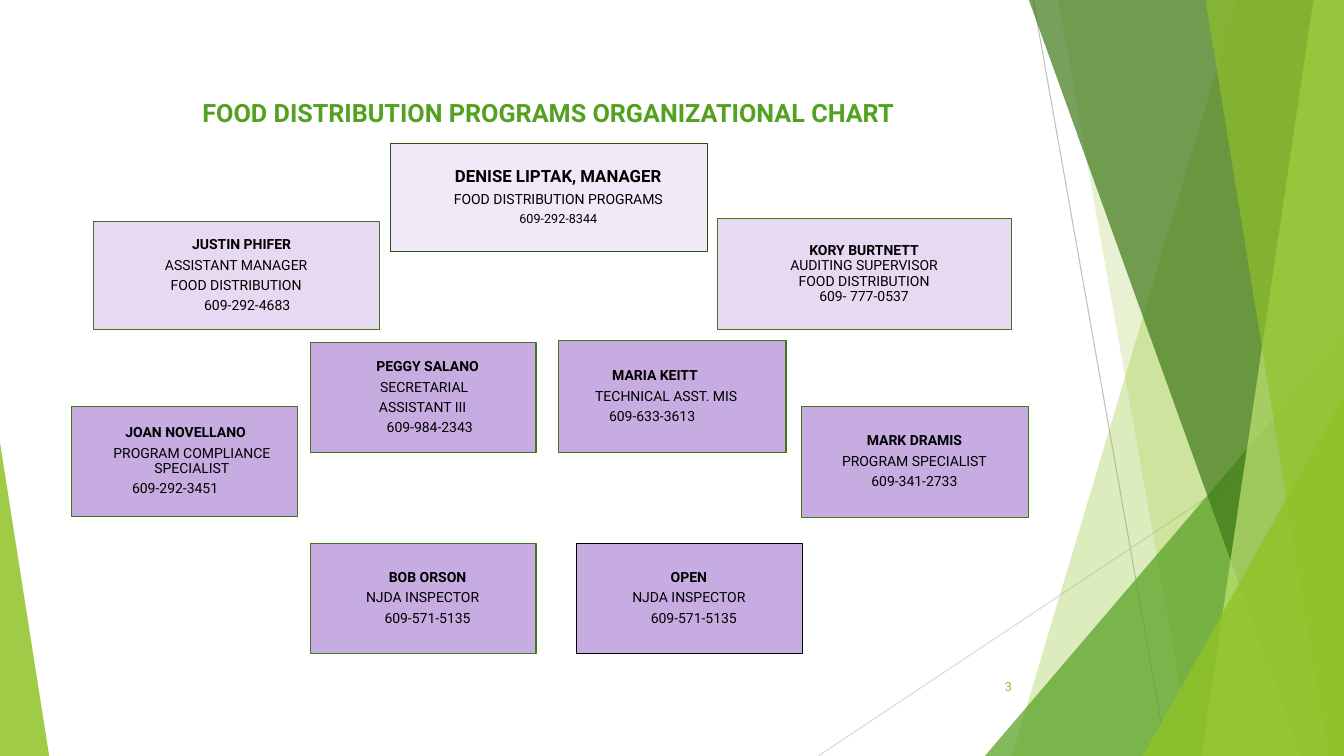
from pptx import Presentation
from pptx.dml.color import RGBColor
from pptx.enum.shapes import MSO_CONNECTOR as Connector, MSO_SHAPE as Shape
from pptx.enum.text import MSO_ANCHOR as Anchor, PP_ALIGN as Align
from pptx.oxml.ns import qn
from pptx.util import Cm, Pt
from lxml.etree import SubElement

WIDTH, HEIGHT = 33.87, 19.05
FONT = "Roboto"
LIME, GREEN, FOREST = "90C226", "54A021", "3F7819"
PALE, LIGHT, PURPLE = "F1E8F8", "E8D9F3", "C7ACE2"
LEFT, CENTER, RIGHT = Align.LEFT, Align.CENTER, Align.RIGHT


def color(value):
    return RGBColor.from_string(value)


def fill_glass(shape, value, opacity):
    shape.shadow.inherit = False
    shape.line.fill.background()
    shape.fill.solid()
    shape.fill.fore_color.rgb = color(value)
    color_element = shape.fill._xPr.find(qn("a:solidFill"))[0]
    SubElement(color_element, qn("a:alpha"), val=str(opacity * 1000))


def add_band(slide, top_x, bottom_x, value, opacity):
    builder = slide.shapes.build_freeform(Cm(top_x), 0)
    corners = [(WIDTH, 0), (WIDTH, HEIGHT), (bottom_x, HEIGHT)]
    builder.add_line_segments([(Cm(x), Cm(y)) for x, y in corners])
    fill_glass(builder.convert_to_shape(), value, opacity)


def add_wedge(slide, left, top, width, apex, value, opacity):
    shape = slide.shapes.add_shape(
        Shape.ISOSCELES_TRIANGLE, Cm(left), Cm(top), Cm(width), Cm(HEIGHT - top))
    shape.adjustments[0] = apex
    fill_glass(shape, value, opacity)


def add_hairline(slide, start, end, value):
    line = slide.shapes.add_connector(
        Connector.STRAIGHT, *(Cm(length) for length in start + end))
    line.line.color.rgb = color(value)
    line.line.width = Pt(0.75)
    SubElement(line._element.spPr, qn("a:effectLst"))


def style_paragraph(paragraph, text, size, value, align, bold=False):
    paragraph.text = text
    paragraph.alignment = align
    paragraph.font.name = FONT
    paragraph.font.size = Pt(size)
    paragraph.font.bold = bold
    paragraph.font.color.rgb = color(value)


def add_label(slide, box, text, size, value, align, bold=False, anchor=Anchor.TOP):
    label = slide.shapes.add_textbox(*(Cm(length) for length in box))
    frame = label.text_frame
    frame.word_wrap = True
    frame.vertical_anchor = anchor
    style_paragraph(frame.paragraphs[0], text, size, value, align, bold)


def add_person(slide, box, fill, lines, inset=0, outline=FOREST,
               sizes=(10, 10, 10, 10), gap=0.37, aligns=(CENTER,) * 4):
    card = slide.shapes.add_shape(Shape.RECTANGLE, *(Cm(length) for length in box))
    card.shadow.inherit = False
    card.fill.solid()
    card.fill.fore_color.rgb = color(fill)
    card.line.color.rgb = color(outline)
    card.line.width = Pt(0.75)
    frame = card.text_frame
    frame.word_wrap = True
    frame.vertical_anchor = Anchor.MIDDLE
    frame.margin_left = Cm(inset)
    frame.margin_top = frame.margin_right = frame.margin_bottom = Cm(0.03)
    for index, ((text, indent), size, align) in enumerate(zip(lines, sizes, aligns)):
        paragraph = frame.add_paragraph() if index else frame.paragraphs[0]
        style_paragraph(paragraph, text, size, "000000", align, index == 0)
        paragraph.line_spacing = 0.9
        paragraph.space_after = Pt(gap * size)
        if indent:
            paragraph._p.get_or_add_pPr().set("marL", str(Cm(indent)))


def add_background(slide):
    add_hairline(slide, (26.04, 0), (29.41, HEIGHT), "BFBFBF")
    add_hairline(slide, (WIDTH, 10.24), (20.62, HEIGHT), "D9D9D9")
    add_band(slide, 31.19, 25.5, LIME, 30)
    add_band(slide, 26.67, 30.05, LIME, 20)
    add_wedge(slide, 24.82, 8.46, 9.05, 1, GREEN, 72)
    add_band(slide, 25.93, 32.79, FOREST, 70)
    add_band(slide, 33.1, 30.28, "C0E474", 70)
    add_band(slide, 30.38, 33.48, LIME, 65)
    add_wedge(slide, 28.8, 9.98, 5.07, 1, LIME, 80)
    add_wedge(slide, 0, 11.15, 1.24, 0, LIME, 85)


def add_people(slide):
    add_person(slide, (9.83, 3.61, 8, 2.72), PALE, [
        ("DENISE LIPTAK, MANAGER", 0), ("FOOD DISTRIBUTION PROGRAMS", 0),
        ("609-292-8344", 0)], inset=0.51, outline="2A5010", sizes=(12, 10, 9))
    add_person(slide, (2.36, 5.59, 7.21, 2.72), LIGHT, [
        ("JUSTIN PHIFER", 0.28), ("ASSISTANT MANAGER", 0),
        ("FOOD DISTRIBUTION", 0), ("609-292-4683", 0.56)])
    add_person(slide, (7.82, 8.64, 5.69, 2.77), PURPLE, [
        ("PEGGY SALANO", 0.25), ("SECRETARIAL", 0.08),
        ("ASSISTANT III", 0), ("609-984-2343", 0.36)])
    add_person(slide, (20.19, 10.24, 5.74, 2.79), PURPLE, [
        ("MARK DRAMIS", 0), ("PROGRAM SPECIALIST", 0), ("609-341-2733", 0)])
    add_person(slide, (14.07, 8.59, 5.74, 2.82), PURPLE, [
        ("MARIA KEITT", 0.95), ("TECHNICAL ASST. MIS", 0.52),
        ("609-633-3613", 0.87)], inset=0.41, aligns=(LEFT,) * 3)
    add_person(slide, (18.08, 5.51, 7.42, 2.79), LIGHT, [
        ("KORY BURTNETT", 0), ("AUDITING SUPERVISOR", 0),
        ("FOOD DISTRIBUTION", 0), ("609- 777-0537", 0)], gap=0)
    add_person(slide, (1.8, 10.24, 5.69, 2.77), PURPLE, [
        ("JOAN NOVELLANO", 0.95), ("PROGRAM COMPLIANCE SPECIALIST", 0),
        ("609-292-3451", 1.12)], inset=0.41, aligns=(LEFT, CENTER, LEFT))
    inspectors = [("BOB ORSON", 0.25, 7.82, FOREST), ("OPEN", 0, 14.53, "000000")]
    for name, indent, left, outline in inspectors:
        add_person(slide, (left, 13.69, 5.69, 2.77), PURPLE, [
            (name, indent), ("NJDA INSPECTOR", 0), ("609-571-5135", 0.25)],
            outline=outline)


def main():
    presentation = Presentation()
    presentation.slide_width = Cm(WIDTH)
    presentation.slide_height = Cm(HEIGHT)
    slide = presentation.slides.add_slide(presentation.slide_layouts[6])
    add_background(slide)
    add_label(slide, (1.88, 2.34, 23.88, 15.34),
              "FOOD DISTRIBUTION PROGRAMS ORGANIZATIONAL CHART", 18, GREEN, CENTER, True)
    add_people(slide)
    add_label(slide, (23.85, 16.79, 1.9, 1.02), "3", 9, LIME, RIGHT, anchor=Anchor.MIDDLE)
    presentation.save("out.pptx")


if __name__ == "__main__":
    main()
